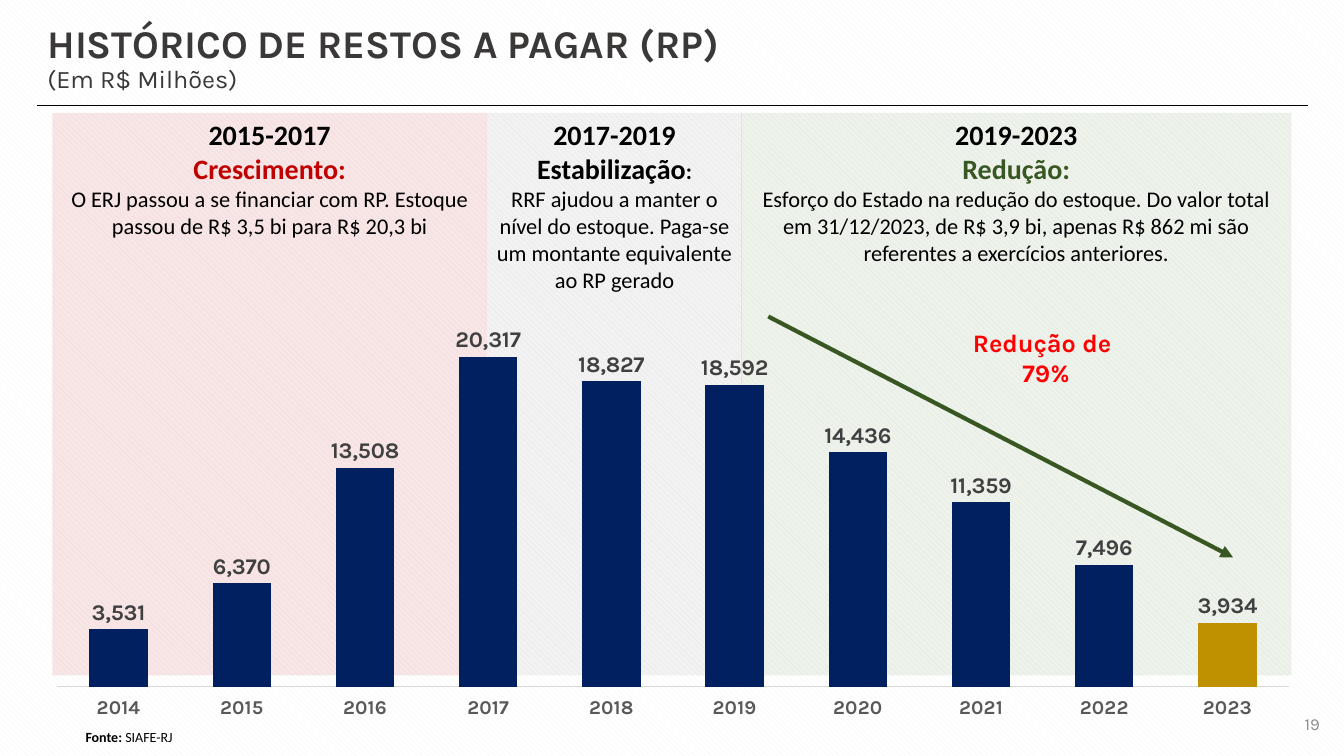
from lxml.etree import SubElement
from pptx import Presentation
from pptx.chart.data import CategoryChartData
from pptx.dml.color import RGBColor
from pptx.enum.chart import XL_CHART_TYPE, XL_LABEL_POSITION, XL_TICK_LABEL_POSITION, XL_TICK_MARK
from pptx.enum.dml import MSO_PATTERN
from pptx.enum.shapes import MSO_CONNECTOR, MSO_SHAPE
from pptx.enum.text import MSO_ANCHOR, MSO_AUTO_SIZE, PP_ALIGN
from pptx.oxml import parse_xml
from pptx.oxml.ns import nsdecls, qn
from pptx.util import Inches, Pt

NAVY, GOLD, GREEN, RED = "002060", "BF9000", "385723", "C00000"
BLACK, TITLE_GRAY = "000000", "3B3838"
STOCK = {"2014": 3531, "2015": 6370, "2016": 13508, "2017": 20317, "2018": 18827,
         "2019": 18592, "2020": 14436, "2021": 11359, "2022": 7496, "2023": 3934}
# left, width, tint, years, heading, heading colour, colon size, description
PERIODS = [
    (0.52, 4.31, RED, "2015-2017", "Crescimento", RED, 20,
     "O ERJ passou a se financiar com RP. Estoque passou de R$ 3,5 bi para R$ 20,3 bi"),
    (4.83, 2.53, "808080", "2017-2019", "Estabilização", BLACK, 16,
     "RRF ajudou a manter o nível do estoque. Paga-se um montante equivalente ao RP gerado"),
    (7.35, 5.46, "548235", "2019-2023", "Redução", GREEN, 20,
     "Esforço do Estado na redução do estoque. Do valor total em 31/12/2023, de R$ 3,9 bi, "
     "apenas R$ 862 mi são referentes a exercícios anteriores."),
]


def color(value):
    return RGBColor.from_string(value)


def style_font(font, size, value, bold=False, name="Karla"):
    font.name, font.size, font.bold = name, Pt(size), bold
    font.color.rgb = color(value)


def add_span(para, text, **style):
    span = para.add_run()
    span.text = text
    style_font(span.font, **style)


def place(shape, left, top, width, height):
    shape.left, shape.top = Inches(left), Inches(top)
    shape.width, shape.height = Inches(width), Inches(height)


def add_text_box(page, left, top, width, height, anchor=MSO_ANCHOR.TOP):
    box = page.shapes.add_textbox(Inches(left), Inches(top), Inches(width), Inches(height))
    box.text_frame.word_wrap = True
    box.text_frame.vertical_anchor = anchor
    return box.text_frame


def add_line(page, start, end, value, width, arrow=False):
    points = [Inches(number) for number in (*start, *end)]
    line = page.shapes.add_connector(MSO_CONNECTOR.STRAIGHT, *points)
    line.line.color.rgb = color(value)
    line.line.width = Pt(width)
    if arrow:
        SubElement(line.line._get_or_add_ln(), qn("a:tailEnd"), type="triangle")
    SubElement(line._element.spPr, qn("a:effectLst"))


def add_header(page, left, top, width, height):
    title = page.shapes.title
    place(title, left, top, width, height)
    frame = title.text_frame
    frame.word_wrap = True
    frame.auto_size = MSO_AUTO_SIZE.NONE
    frame.vertical_anchor = MSO_ANCHOR.MIDDLE
    heading, unit = frame.paragraphs[0], frame.add_paragraph()
    for para in (heading, unit):
        para.alignment = PP_ALIGN.LEFT
        para.line_spacing = 0.9
        para.space_before = Pt(0)
    add_span(heading, "HISTÓRICO DE RESTOS A PAGAR (RP)", size=28, value=TITLE_GRAY, bold=True)
    add_span(unit, "(Em R$ Milhões)", size=18, value=TITLE_GRAY)
    add_line(page, (left, 1.05), (left + 12.6, 1.05), BLACK, 0.5)


def add_period(page, left, width, tint, years, heading, heading_color, colon_size, description,
               top=1.12, height=5.58):
    panel = page.shapes.add_shape(MSO_SHAPE.RECTANGLE, Inches(left), Inches(top),
                                  Inches(width), Inches(height))
    panel.shadow.inherit = False
    panel.line.fill.background()
    panel.fill.solid()
    panel.fill.fore_color.rgb = color(tint)
    tint_node = panel._element.spPr.find(qn("a:solidFill"))[0]
    SubElement(tint_node, qn("a:alpha"), val="10000")

    frame = panel.text_frame
    frame.word_wrap = True
    frame.vertical_anchor = MSO_ANCHOR.TOP
    first, second = frame.paragraphs[0], frame.add_paragraph()
    first.alignment = second.alignment = PP_ALIGN.CENTER
    add_span(first, years, size=20, value=BLACK, bold=True, name="Calibri")
    add_span(second, heading, size=20, value=heading_color, bold=True, name="Calibri")
    add_span(second, ":", size=colon_size, value=heading_color, bold=True, name="Calibri")
    second.add_line_break()
    add_span(second, description, size=16, value=BLACK, name="Calibri")


def add_stock_chart(page, left, top, width, height):
    data = CategoryChartData(number_format="#,##0")
    data.categories = list(STOCK)
    data.add_series("Restos a pagar", STOCK.values())
    chart = page.shapes.add_chart(XL_CHART_TYPE.COLUMN_CLUSTERED, Inches(left), Inches(top),
                                  Inches(width), Inches(height), data).chart
    chart.has_legend = chart.has_title = False
    style_font(chart.font, 10, BLACK)

    # Axes
    years, amounts = chart.category_axis, chart.value_axis
    years.major_tick_mark = XL_TICK_MARK.NONE
    years.tick_label_position = XL_TICK_LABEL_POSITION.LOW
    years.format.line.color.rgb = color("D9D9D9")
    years.format.line.width = Pt(0.75)
    style_font(years.tick_labels.font, 14, "595959", bold=True)
    amounts.visible = amounts.has_major_gridlines = False
    amounts.minimum_scale, amounts.maximum_scale = 0, 25000

    # Columns, the last year highlighted
    plot = chart.plots[0]
    plot.gap_width, plot.overlap, plot.vary_by_categories = 111, 8, False
    series = plot.series[0]
    last_column = series.points[len(STOCK) - 1]
    for column, value in ((series, NAVY), (last_column, GOLD)):
        column.format.fill.solid()
        column.format.fill.fore_color.rgb = color(value)

    # Value labels
    labels = series.data_labels
    labels.show_value = True
    labels.position = XL_LABEL_POSITION.OUTSIDE_END
    labels.number_format, labels.number_format_is_linked = "#,##0", False
    style_font(labels.font, 16, "404040", bold=True)

    # Plot area as fractions of the chart
    plot_area = chart._chartSpace.chart.plotArea
    for layout in plot_area.findall(qn("c:layout")):
        plot_area.remove(layout)
    plot_area.insert(0, parse_xml(
        f'<c:layout {nsdecls("c")}><c:manualLayout><c:layoutTarget val="inner"/>'
        '<c:xMode val="edge"/><c:yMode val="edge"/><c:x val="0.02"/><c:y val="0.02"/>'
        '<c:w val="0.96"/><c:h val="0.9"/></c:manualLayout></c:layout>'))


def add_reduction(page, left, top, width, height):
    add_line(page, (left, top), (left + width, top + height), GREEN, 3, arrow=True)
    frame = add_text_box(page, left + 1.93, top + 0.06, 1.65, 0.71)
    label, rate = frame.paragraphs[0], frame.add_paragraph()
    rate.alignment = PP_ALIGN.CENTER
    add_span(label, "Redução de", size=18, value="FF0000", bold=True)
    add_span(rate, "79%", size=18, value="FF0000", bold=True)


def add_footer(page, left, top, width, height):
    source = add_text_box(page, left, top, width, height).paragraphs[0]
    add_span(source, "Fonte: ", size=10, value=BLACK, bold=True, name="Calibri")
    add_span(source, "SIAFE-RJ", size=10, value=BLACK, name="Calibri")
    number = add_text_box(page, 12.23, 6.98, 0.96, 0.4, MSO_ANCHOR.MIDDLE).paragraphs[0]
    number.alignment = PP_ALIGN.RIGHT
    add_span(number, "19", size=12, value="8C8C8C")


def main():
    deck = Presentation()
    deck.slide_width, deck.slide_height = Inches(13.33), Inches(7.5)
    page = deck.slides.add_slide(deck.slide_layouts[5])
    backdrop = page.background.fill
    backdrop.patterned()
    backdrop.pattern = MSO_PATTERN.WIDE_DOWNWARD_DIAGONAL
    backdrop.fore_color.rgb = color("F2F2F2")
    backdrop.back_color.rgb = color("FFFFFF")

    add_header(page, 0.37, 0.19, 7.85, 0.79)
    for period in PERIODS:
        add_period(page, *period)
    add_stock_chart(page, 0.31, 2.7, 12.73, 4.47)
    add_reduction(page, 7.62, 3.14, 4.61, 2.39)
    add_footer(page, 0.75, 7.18, 5.36, 0.27)
    deck.save("out.pptx")


if __name__ == "__main__":
    main()
